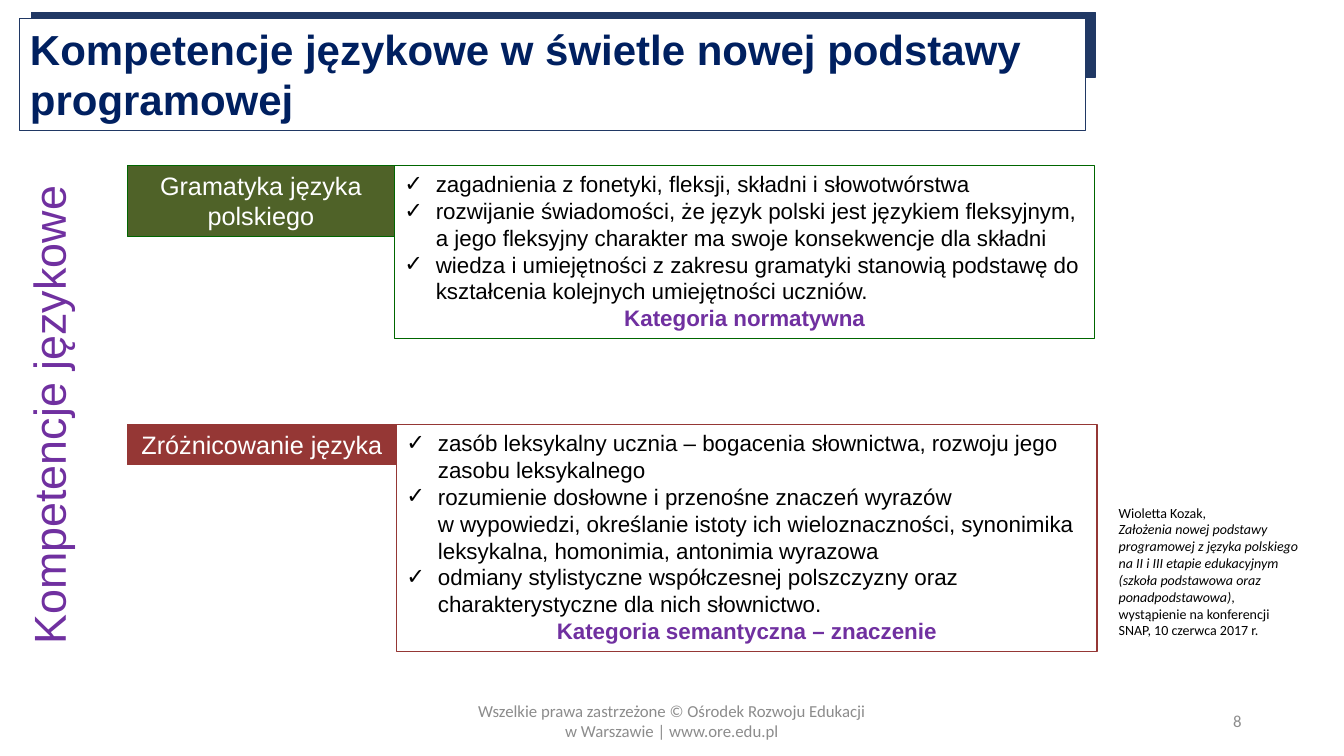
from lxml import etree
from pptx import Presentation
from pptx import util as u
from pptx.dml.color import RGBColor
from pptx.enum import shapes, text
from pptx.oxml.ns import qn

NAVY, GREEN, RED = "203864", "006600", "953735"
PURPLE, GREY, BLACK, WHITE = "7030A0", "8C8C8C", "000000", "FFFFFF"
LEFT, CENTER, RIGHT = text.PP_ALIGN.LEFT, text.PP_ALIGN.CENTER, text.PP_ALIGN.RIGHT
TOP, MIDDLE = text.MSO_ANCHOR.TOP, text.MSO_ANCHOR.MIDDLE


def color(value):
    return RGBColor.from_string(value)


def place(box, left, top, width, height):
    box.left, box.top = u.Pt(left), u.Pt(top)
    box.width, box.height = u.Pt(width), u.Pt(height)


def paint(box, fill, line):
    if fill:
        box.fill.solid()
        box.fill.fore_color.rgb = color(fill)
    else:
        box.fill.background()
    box.line.color.rgb = color(line)
    box.line.width = u.Pt(0.75)


def add_rectangle(page, area, fill, line):
    box = page.shapes.add_shape(shapes.MSO_SHAPE.RECTANGLE, *map(u.Pt, area))
    box.shadow.inherit = False
    paint(box, fill, line)
    return box


def add_bullet(para, indent=22.5):
    properties = para._p.get_or_add_pPr()
    properties.set("marL", str(u.Pt(indent)))
    properties.set("indent", str(-u.Pt(indent)))
    etree.SubElement(properties, qn("a:buFont")).set("typeface", "Arial")
    etree.SubElement(properties, qn("a:buChar")).set("char", "✓")


def add_run(para, words, size, ink, font="Arial", bold=False, italic=False):
    span = para.add_run()
    span.text = words
    span.font.name, span.font.size = font, u.Pt(size)
    span.font.color.rgb = color(ink)
    span.font.bold, span.font.italic = bold, italic


def prepare(box, anchor=TOP):
    frame = box.text_frame
    frame.word_wrap = True
    frame.auto_size = text.MSO_AUTO_SIZE.NONE
    frame.vertical_anchor = anchor
    return frame


def next_para(frame, align=LEFT):
    first = frame.paragraphs[0]
    para = frame.add_paragraph() if first.runs else first
    para.alignment = align
    return para


def add_text(page, area, lines, size, ink, font="Arial", align=LEFT, anchor=TOP):
    box = page.shapes.add_textbox(*map(u.Pt, area))
    frame = prepare(box, anchor)
    for line in lines:
        para = next_para(frame, align)
        for words, italic in line:
            add_run(para, words, size, ink, font, italic=italic)
    return box


def add_topic(page, top, label, label_size, fill, edge, body_size, points, category):
    label_width, label_height = label_size
    tag = add_rectangle(page, (91, top, label_width, label_height), fill, edge)
    add_run(next_para(prepare(tag), CENTER), label, 18, WHITE)

    body = add_rectangle(page, (91 + label_width, top, *body_size), None, edge)
    frame = prepare(body)
    for point in points:
        para = next_para(frame)
        add_bullet(para)
        for number, words in enumerate(point.split("\n")):
            if number:
                para.add_line_break()
            add_run(para, words, 16, BLACK)
    add_run(next_para(frame, CENTER), category, 16, PURPLE, bold=True)


def add_title(page, words):
    band = add_rectangle(page, (22.5, 9, 760, 46), NAVY, NAVY)
    title = page.shapes.title
    place(title, 14.2, 13, 761, 80)
    paint(title, WHITE, NAVY)
    add_run(next_para(prepare(title)), words, 30, "002060", bold=True)
    band.element.addnext(title.element)


def main():
    deck = Presentation()
    deck.slide_width, deck.slide_height = u.Pt(960), u.Pt(540)
    page = deck.slides.add_slide(deck.slide_layouts[5])

    footer = ["Wszelkie prawa zastrzeżone © Ośrodek Rozwoju Edukacji",
              "w Warszawie | www.ore.edu.pl"]
    add_text(page, (318, 500.5, 324, 28.75), [[(line, False)] for line in footer],
             12, GREY, "Calibri", CENTER, MIDDLE)
    add_text(page, (678, 500.5, 216, 28.75), [[("8", False)]],
             12, GREY, "Calibri", RIGHT, MIDDLE)

    add_topic(page, 118, "Gramatyka języka polskiego", (190.7, 51), "4F6228", GREEN,
              (500.4, 124), [
                  "zagadnienia z fonetyki, fleksji, składni i słowotwórstwa",
                  "rozwijanie świadomości, że język polski jest językiem fleksyjnym, "
                  "a jego fleksyjny charakter ma swoje konsekwencje dla składni",
                  "wiedza i umiejętności z zakresu gramatyki stanowią podstawę do "
                  "kształcenia kolejnych umiejętności uczniów.",
              ], "Kategoria normatywna")
    add_topic(page, 303, "Zróżnicowanie języka", (192.2, 29), RED, RED,
              (500.4, 162.5), [
                  "zasób leksykalny ucznia – bogacenia słownictwa, rozwoju jego "
                  "zasobu leksykalnego",
                  "rozumienie dosłowne i przenośne znaczeń wyrazów\n"
                  "w wypowiedzi, określanie istoty ich wieloznaczności, synonimika "
                  "leksykalna, homonimia, antonimia wyrazowa",
                  "odmiany stylistyczne współczesnej polszczyzny oraz "
                  "charakterystyczne dla nich słownictwo.",
              ], "Kategoria semantyczna – znaczenie")

    side = add_text(page, (-160, 273.6, 389, 46), [[("Kompetencje językowe", False)]],
                    32, PURPLE, align=CENTER)
    side.rotation = 270

    add_title(page, "Kompetencje językowe w świetle nowej podstawy programowej")

    add_text(page, (792, 356.5, 144, 104.5), [
        [("Wioletta Kozak,", False)],
        [("Założenia nowej podstawy programowej z języka polskiego "
          "na II i III etapie edukacyjnym", True)],
        [("(szkoła podstawowa oraz ponadpodstawowa)", True),
         (", wystąpienie na konferencji SNAP, 10 czerwca 2017 r.", False)],
    ], 10, BLACK, "Calibri")

    deck.save("out.pptx")


if __name__ == "__main__":
    main()
